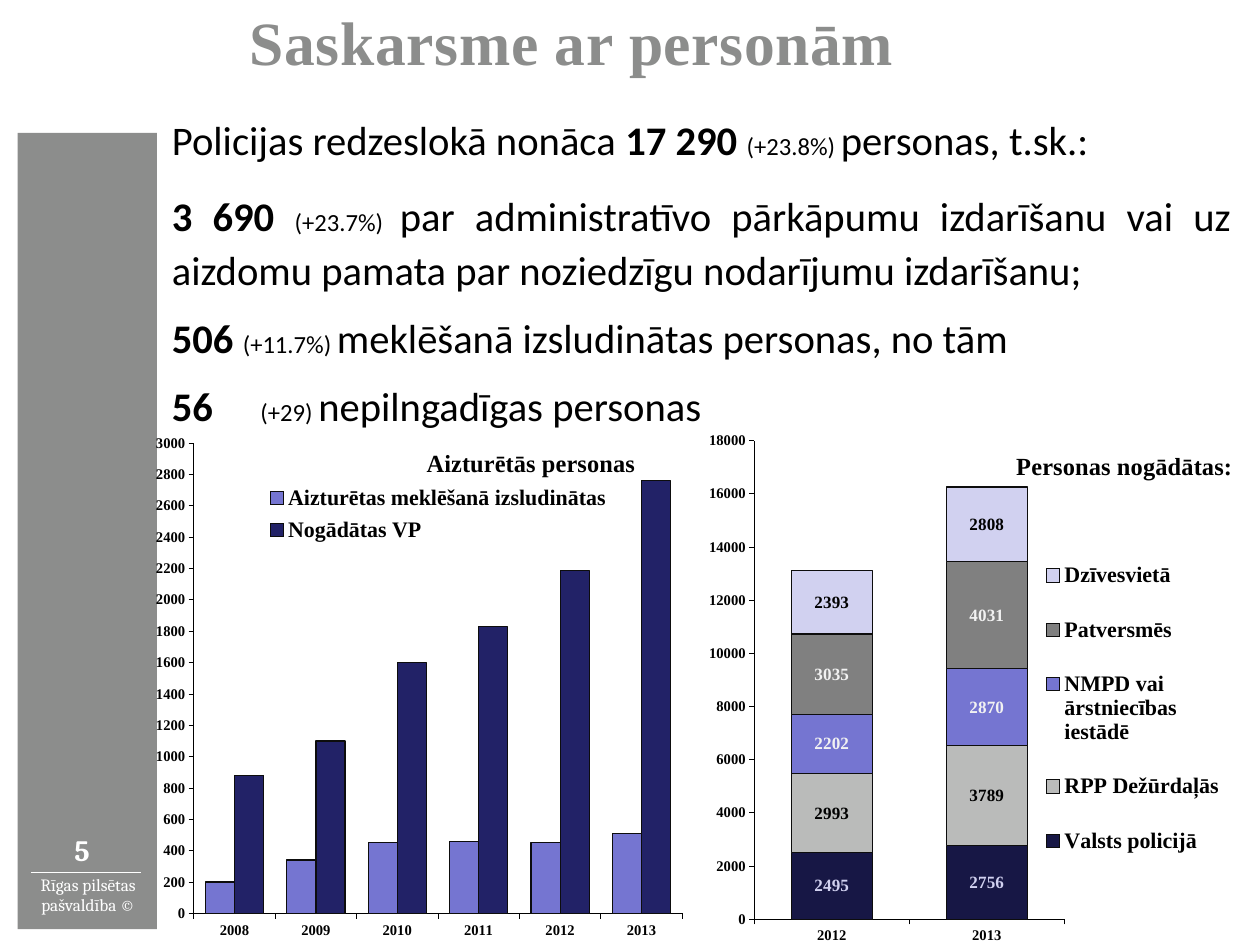
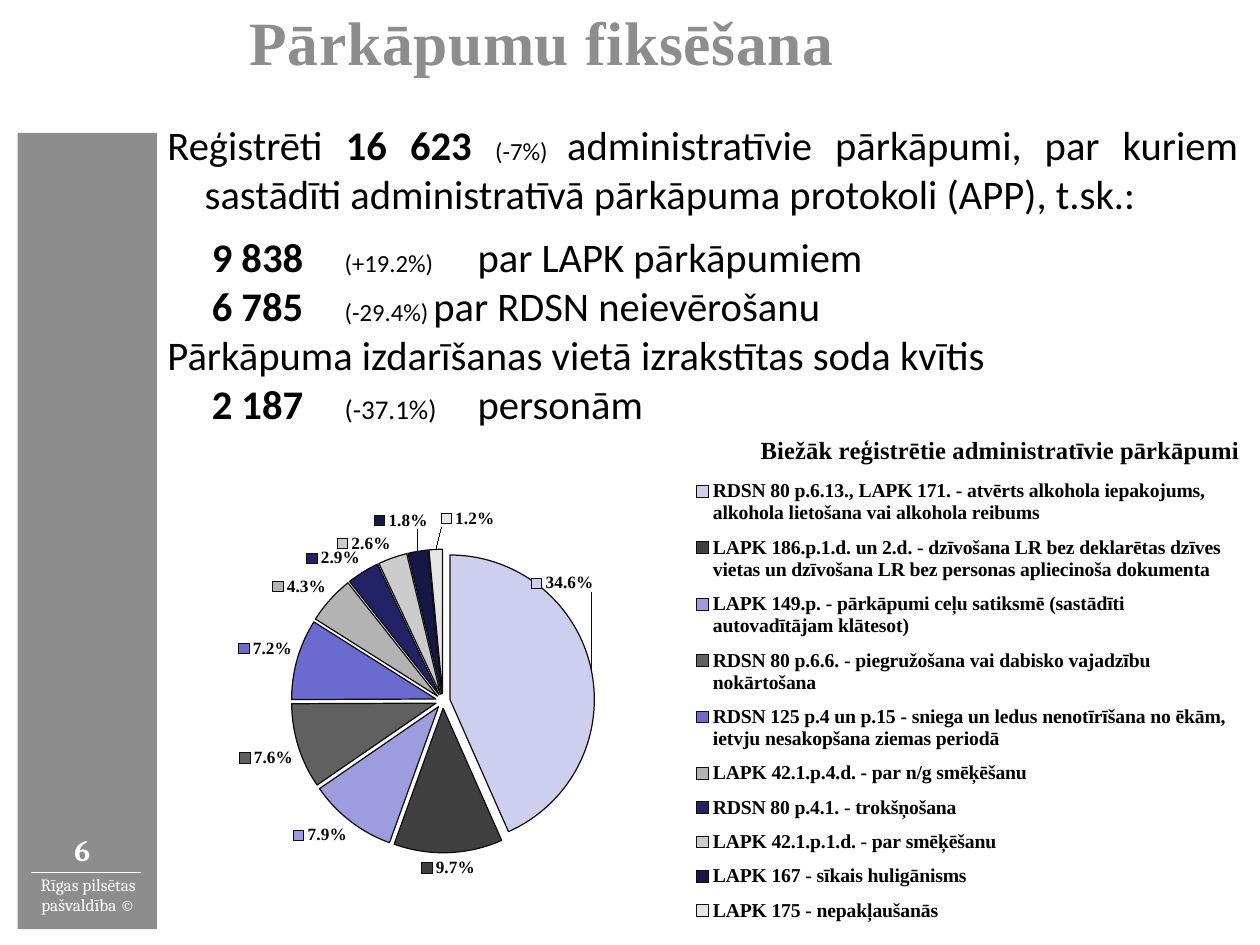
from lxml import etree
from pptx import Presentation
from pptx.chart.data import CategoryChartData
from pptx.dml.color import RGBColor
from pptx.enum.chart import XL_CHART_TYPE, XL_LABEL_POSITION, XL_LEGEND_POSITION, XL_TICK_LABEL_POSITION
from pptx.enum.shapes import MSO_CONNECTOR, MSO_SHAPE
from pptx.enum.text import MSO_ANCHOR, PP_ALIGN
from pptx.oxml import parse_xml
from pptx.oxml.ns import nsdecls, qn
from pptx.util import Inches, Pt

CLUSTERED = XL_CHART_TYPE.COLUMN_CLUSTERED
STACKED = XL_CHART_TYPE.COLUMN_STACKED
PIE = XL_CHART_TYPE.PIE
OUTSIDE = XL_LABEL_POSITION.OUTSIDE_END
LEGEND_RIGHT = XL_LEGEND_POSITION.RIGHT
TICKS_LOW = XL_TICK_LABEL_POSITION.LOW
LEFT, CENTER, JUSTIFY = PP_ALIGN.LEFT, PP_ALIGN.CENTER, PP_ALIGN.JUSTIFY
TOP, MIDDLE = MSO_ANCHOR.TOP, MSO_ANCHOR.MIDDLE

COLORS = {
    "gray": "8C8D8C", "white": "FFFFFF", "black": "000000", "outline": "0D0D0D",
    "navy": "222267", "midnight": "171745", "violet": "7575D1", "lilac": "D1D1F0",
    "silver": "BABBBA", "steel": "808080", "pale": "F2F2F2",
}
PIE_COLORS = ["CECEEF", "404040", "9C9CDF", "606060", "6B6BCF",
              "B3B3B3", "222267", "CCCCCC", "171745", "E6E6E6"]
SERIF, BODY, FOOTER = "Times New Roman", "Calibri", "Cambria"
BODY_SIZE, NOTE_SIZE = 33, 20

PLAIN, BOLD, NOTE, BIG_NOTE = {}, {"bold": True}, {"size": NOTE_SIZE}, {"size": 22}
SPACED = {"align": JUSTIFY, "line": 1.1, "before": 6, "after": 6}
TABBED = {"tabs": [1.59, 2.77, 3.96]}

CONTACT_TEXT = [
    ({**SPACED, "before": 0, "after": 12},
     [("Policijas redzeslokā nonāca ", PLAIN), ("17 290 ", BOLD),
      ("(+23.8%) ", NOTE), ("personas, t.sk.:", PLAIN)]),
    (SPACED,
     [("3 690 ", BOLD), ("(+23.7%) ", NOTE),
      ("par administratīvo pārkāpumu izdarīšanu vai uz aizdomu pamata par "
       "noziedzīgu nodarījumu izdarīšanu;", PLAIN)]),
    (SPACED,
     [("506 ", BOLD), ("(+11.7%) ", NOTE), ("meklēšanā izsludinātas personas, no tām", PLAIN)]),
    (SPACED,
     [("56 \t", BOLD), ("(+29) ", NOTE), ("nepilngadīgas personas", PLAIN)]),
]
OFFENCE_TEXT = [
    ({"align": JUSTIFY, "hanging": 0.42, "after": 12},
     [("Reģistrēti ", PLAIN), ("16 623 ", BOLD), ("(-7%) ", NOTE),
      ("administratīvie pārkāpumi, par kuriem sastādīti administratīvā "
       "pārkāpuma protokoli (APP), t.sk.:", PLAIN)]),
    (TABBED, [("\t9 838\t", BOLD), ("(+19.2%)", NOTE), ("\tpar LAPK pārkāpumiem", PLAIN)]),
    (TABBED, [("\t6 785\t", BOLD), ("(-29.4%)", NOTE), ("\tpar RDSN neievērošanu", PLAIN)]),
    ({}, [("Pārkāpuma izdarīšanas vietā izrakstītas soda kvītis", PLAIN)]),
    (TABBED, [("\t2 187\t", BOLD), ("(-37.1%)", BIG_NOTE), ("\tpersonām", PLAIN)]),
]

DETAINED = {
    "type": CLUSTERED, "box": (1.76, 4.89, 6.06, 5.71), "title": "Aizturētās personas",
    "title_at": (0.49, 0.02), "plot": (0.06, 0.02, 0.92, 0.93),
    "legend": (0.18, 0.09, 0.68, 0.14), "legend_size": 18,
    "gap": 80, "overlap": 0, "max": 3000, "step": 200,
    "categories": ["2008", "2009", "2010", "2011", "2012", "2013"],
    "series": [
        ("Aizturētas meklēšanā izsludinātas", [200, 340, 450, 460, 450, 510], "violet", None),
        ("Nogādātas VP", [880, 1100, 1600, 1830, 2190, 2760], "navy", None),
    ],
}
DELIVERED = {
    "type": STACKED, "box": (7.98, 4.86, 5.98, 5.81), "title": "Personas nogādātas:",
    "title_at": (0.58, 0.03), "plot": (0.09, 0.02, 0.59, 0.93),
    "legend": (0.62, 0.2, 0.38, 0.68), "legend_size": 18,
    "gap": 92, "overlap": 100, "max": 18000, "step": 2000,
    "categories": ["2012", "2013"],
    "series": [
        ("Valsts policijā", [2495, 2756], "midnight", "lilac"),
        ("RPP Dežūrdaļās", [2993, 3789], "silver", "black"),
        ("NMPD vai ārstniecības iestādē", [2202, 2870], "violet", "pale"),
        ("Patversmēs", [3035, 4031], "steel", "pale"),
        ("Dzīvesvietā", [2393, 2808], "lilac", "black"),
    ],
}
OFFENCES = [
    ("RDSN 80 p.6.13., LAPK 171. - atvērts alkohola iepakojums, alkohola lietošana "
     "vai alkohola reibums", 0.346),
    ("LAPK 186.p.1.d. un 2.d. - dzīvošana LR bez deklarētas dzīves vietas un dzīvošana "
     "LR bez personas apliecinoša dokumenta", 0.097),
    ("LAPK 149.p. - pārkāpumi ceļu satiksmē (sastādīti autovadītājam klātesot)", 0.079),
    ("RDSN 80 p.6.6. - piegružošana vai dabisko vajadzību nokārtošana", 0.076),
    ("RDSN 125 p.4 un p.15 - sniega un ledus nenotīrīšana no ēkām, ietvju nesakopšana "
     "ziemas periodā", 0.072),
    ("LAPK 42.1.p.4.d. - par n/g smēķēšanu", 0.043),
    ("RDSN 80 p.4.1. - trokšņošana", 0.029),
    ("LAPK 42.1.p.1.d. - par smēķēšanu", 0.026),
    ("LAPK 167 - sīkais huligānisms", 0.018),
    ("LAPK 175 - nepakļaušanās", 0.012),
]
OFFENCE_TITLE = "Biežāk reģistrētie administratīvie pārkāpumi"
OFFENCE_PIE = {
    "type": PIE, "box": (1.83, 4.55, 12.21, 6.12), "title": OFFENCE_TITLE,
    "title_at": (0.55, 0.05), "plot": (0.03, 0.27, 0.46, 0.56),
    "legend": (0.49, 0.12, 0.5, 0.86), "legend_size": 16,
    "categories": [name for name, share in OFFENCES],
    "series": [(OFFENCE_TITLE, [share for name, share in OFFENCES], "lilac", "black")],
    "explosion": 5,
    "label_shifts": {0: (-0.06, -0.14), 8: (0.01, -0.03), 9: (0.03, -0.03)},
}

SLIDES = [
    ("5", "Saskarsme ar personām", (1.88, 1.08, 12.08, 3.94), CONTACT_TEXT, [DETAINED, DELIVERED]),
    ("6", "Pārkāpumu fiksēšana", (1.83, 1.36, 12.21, 3.46), OFFENCE_TEXT, [OFFENCE_PIE]),
]


def rgb(name):
    return RGBColor.from_string(COLORS.get(name, name))


def set_font(font, name, size, color, bold=False):
    font.name, font.size, font.bold = name, Pt(size), bold
    font.color.rgb = rgb(color)


def paint(shape_format, fill, line, width):
    shape_format.fill.solid()
    shape_format.fill.fore_color.rgb = rgb(fill)
    shape_format.line.color.rgb = rgb(line)
    shape_format.line.width = Pt(width)


def add_text_box(slide, box, margin, anchor, wrap=True):
    frame = slide.shapes.add_textbox(*map(Inches, box)).text_frame
    frame.word_wrap, frame.vertical_anchor = wrap, anchor
    frame.margin_left = frame.margin_right = Inches(margin)
    frame.margin_top = frame.margin_bottom = Inches(margin)
    return frame


def add_label(slide, box, text, font, margin=0.06, anchor=TOP, align=LEFT, wrap=True):
    paragraph = add_text_box(slide, box, margin, anchor, wrap).paragraphs[0]
    paragraph.text, paragraph.alignment = text, align
    set_font(paragraph.font, *font)
    return paragraph


def add_frame(slide, number, title):
    band = slide.shapes.add_shape(MSO_SHAPE.RECTANGLE, *map(Inches, (0.2, 1.5, 1.57, 8.99)))
    band.shadow.inherit = False
    band.fill.solid()
    band.fill.fore_color.rgb = rgb("gray")
    band.line.fill.background()
    add_label(slide, (0.21, 9.88, 1.57, 0.44), "Rīgas pilsētas pašvaldība ©",
              (FOOTER, 14, "white"), 0, MIDDLE, CENTER)
    rule = slide.shapes.add_connector(MSO_CONNECTOR.STRAIGHT, *map(Inches, (0.35, 9.85, 1.59, 9.85)))
    rule.line.color.rgb = rgb("white")
    rule.line.width = Pt(1)
    etree.SubElement(rule.element.spPr, qn("a:effectLst"))
    add_label(slide, (0.74, 9.29, 0.46, 0.51), number, (FOOTER, 24, "white", True), 0.1, wrap=False)
    heading = add_label(slide, (2.76, -0.02, 11.44, 1.11), title, (SERIF, 50, "gray", True))
    heading.runs[0]._r.get_or_add_rPr().set("spc", "50")


def add_body(slide, box, paragraphs):
    frame = add_text_box(slide, box, 0.06, MIDDLE)
    for index, (layout, runs) in enumerate(paragraphs):
        paragraph = frame.add_paragraph() if index else frame.paragraphs[0]
        paragraph.alignment = layout.get("align", LEFT)
        paragraph.line_spacing = layout.get("line", 1.0)
        paragraph.space_before = Pt(layout.get("before", 0))
        paragraph.space_after = Pt(layout.get("after", 0))
        properties = paragraph._p.get_or_add_pPr()
        hanging = Inches(layout.get("hanging", 0))
        properties.set("marL", str(hanging))
        properties.set("indent", str(-hanging))
        if "tabs" in layout:
            tab_list = etree.SubElement(properties, qn("a:tabLst"))
            for position in layout["tabs"]:
                etree.SubElement(tab_list, qn("a:tab"), pos=str(Inches(position)), algn="l")
        set_font(paragraph.font, BODY, BODY_SIZE, "black")
        for text, style in runs:
            run = paragraph.add_run()
            run.text = text
            if "bold" in style:
                run.font.bold = True
            if "size" in style:
                run.font.size = Pt(style["size"])


def manual_layout(values, inner=False, edge=True):
    parts = [("layoutTarget", "inner")] if inner else []
    if edge:
        parts += [("xMode", "edge"), ("yMode", "edge")]
    parts += zip("xywh", values)
    body = "".join(f'<c:{tag} val="{value}"/>' for tag, value in parts)
    return parse_xml(f'<c:layout {nsdecls("c")}><c:manualLayout>{body}</c:manualLayout></c:layout>')


def place_part(chart, tag, position, values):
    part = chart.element.xpath(f"./c:chart//c:{tag}")[0]
    for old in part.findall(qn("c:layout")):
        part.remove(old)
    part.insert(position, manual_layout(values, inner=tag == "plotArea"))


def style_axes(chart, data):
    plot = chart.plots[0]
    plot.gap_width, plot.overlap = data["gap"], data["overlap"]
    for axis in (chart.category_axis, chart.value_axis):
        axis.has_major_gridlines = False
        axis.format.line.color.rgb = rgb("black")
        axis.format.line.width = Pt(0.75)
        set_font(axis.tick_labels.font, SERIF, 12, "black", True)
    chart.category_axis.tick_label_position = TICKS_LOW
    chart.value_axis.minimum_scale = 0
    chart.value_axis.maximum_scale = data["max"]
    chart.value_axis.major_unit = data["step"]


def style_pie(chart, data):
    series = chart.plots[0].series[0]
    properties = chart.element.xpath(".//c:ser/c:spPr")[0]
    properties.addnext(parse_xml(f'<c:explosion {nsdecls("c")} val="{data["explosion"]}"/>'))
    for index, color in enumerate(PIE_COLORS):
        paint(series.points[index].format, color, "outline", 1)
    labels = series.data_labels
    labels.number_format, labels.number_format_is_linked = "0.0%", False
    labels.position, labels.show_legend_key = OUTSIDE, True
    label_list = chart.element.xpath(".//c:ser/c:dLbls")[0]
    flags = {"LegendKey": 1, "Val": 1, "CatName": 0, "SerName": 0, "Percent": 0, "BubbleSize": 0}
    shows = "".join(f'<c:show{name} val="{value}"/>' for name, value in flags.items())
    for position, (index, shift) in enumerate(data["label_shifts"].items()):
        label = parse_xml(f'<c:dLbl {nsdecls("c")}><c:idx val="{index}"/>'
                          f'<c:dLblPos val="outEnd"/>{shows}</c:dLbl>')
        label.insert(1, manual_layout(shift, edge=False))
        label_list.insert(position, label)


def add_chart(slide, data):
    chart_data = CategoryChartData()
    chart_data.categories = data["categories"]
    for name, values, fill, label_color in data["series"]:
        chart_data.add_series(name, values)
    chart = slide.shapes.add_chart(data["type"], *map(Inches, data["box"]), chart_data).chart
    set_font(chart.font, SERIF, 14, "black", True)
    chart.has_title = True
    chart.chart_title.text_frame.text = data["title"]
    set_font(chart.chart_title.text_frame.paragraphs[0].font, SERIF, 20, "black", True)
    chart.has_legend = True
    chart.legend.position, chart.legend.include_in_layout = LEGEND_RIGHT, False
    set_font(chart.legend.font, SERIF, data["legend_size"], "black", True)
    place_part(chart, "title", 1, data["title_at"])
    place_part(chart, "legend", 1, data["legend"])
    place_part(chart, "plotArea", 0, data["plot"])
    plot = chart.plots[0]
    plot.vary_by_categories = data["type"] == PIE
    for series, (name, values, fill, label_color) in zip(plot.series, data["series"]):
        paint(series.format, fill, "outline", 1)
        if label_color:
            series.data_labels.show_value = True
            set_font(series.data_labels.font, SERIF, 14, label_color, True)
    (style_pie if data["type"] == PIE else style_axes)(chart, data)


def main():
    presentation = Presentation()
    presentation.slide_width, presentation.slide_height = Inches(14.22), Inches(10.67)
    for number, title, body_box, paragraphs, charts in SLIDES:
        slide = presentation.slides.add_slide(presentation.slide_layouts[6])
        add_frame(slide, number, title)
        add_body(slide, body_box, paragraphs)
        for data in charts:
            add_chart(slide, data)
    presentation.save("out.pptx")


if __name__ == "__main__":
    main()
